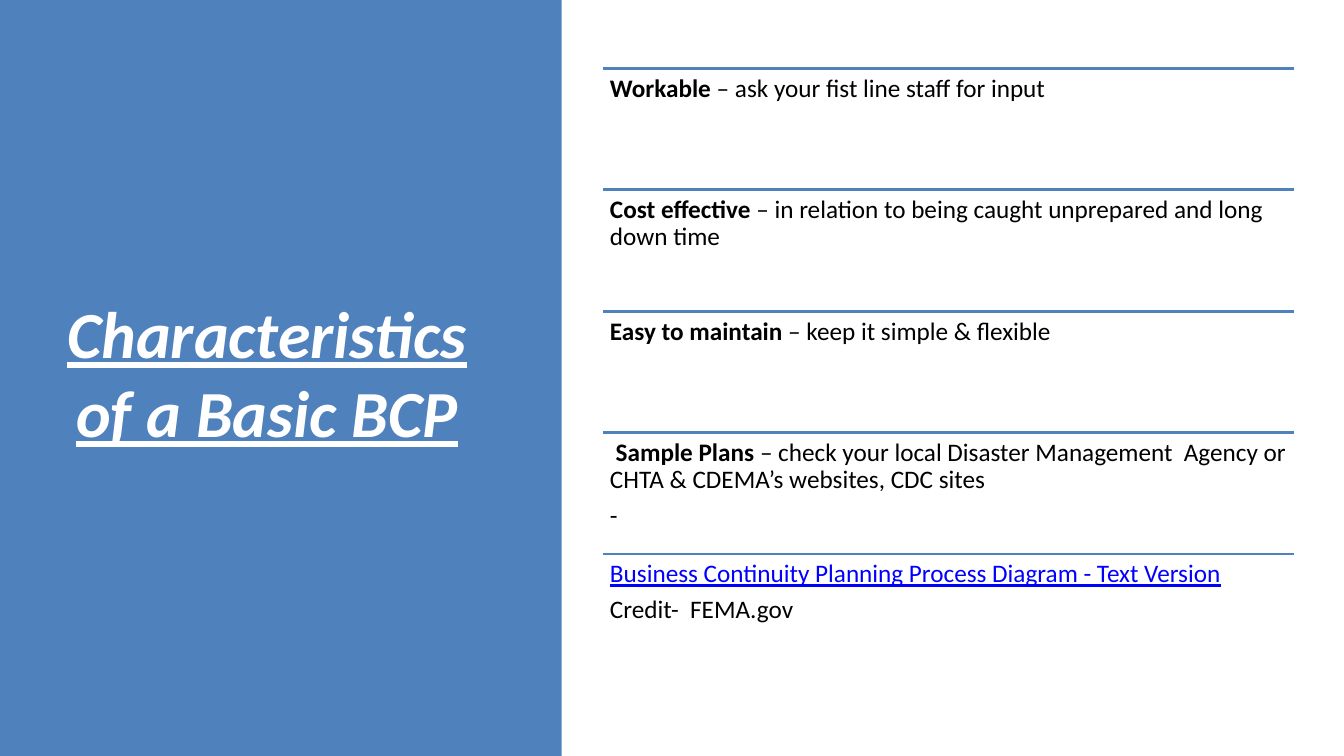
from dataclasses import dataclass

from lxml import etree
from pptx import Presentation
from pptx.dml.color import RGBColor
from pptx.enum.shapes import MSO_CONNECTOR, MSO_SHAPE
from pptx.enum.text import MSO_ANCHOR, PP_ALIGN
from pptx.oxml.ns import qn
from pptx.util import Inches, Pt

RECTANGLE = MSO_SHAPE.RECTANGLE
STRAIGHT = MSO_CONNECTOR.STRAIGHT
TOP, MIDDLE = MSO_ANCHOR.TOP, MSO_ANCHOR.MIDDLE
LEFT, CENTER = PP_ALIGN.LEFT, PP_ALIGN.CENTER


@dataclass(frozen=True)
class Theme:
    font: str = "Calibri"
    accent: str = "4F81BD"
    title_color: str = "FFFFFF"
    body_color: str = "000000"
    link_color: str = "0000FF"
    title_size: float = 47
    body_size: float = 18
    rule_width: float = 2


THEME = Theme()
BOLD = {"bold": True}
LINK = {"color": THEME.link_color, "underline": True}

TITLE = "Characteristics of a Basic BCP"

# Each item is a list of paragraphs; each paragraph is a list of (text, format)
ITEMS = [
    [[("Workable", BOLD), (" – ask your fist line staff for input", {})]],
    [[("Cost effective ", BOLD),
      ("– in relation to being caught unprepared and long down time", {})]],
    [[("Easy to maintain ", BOLD), ("– keep it simple & flexible", {})]],
    [[(" ", {}), ("Sample Plans ", BOLD),
      ("– check your local Disaster Management  Agency or CHTA & CDEMA’s "
       "websites, CDC sites", {})],
     [("-", {})]],
    [[("Business Continuity Planning Process Diagram - Text Version", LINK)],
     [("Credit-  FEMA.gov", {})]],
]


def add_span(para, text, size=THEME.body_size, color=THEME.body_color,
             bold=False, italic=False, underline=False):
    span = para.add_run()
    span.text = text
    font = span.font
    font.name = THEME.font
    font.size = Pt(size)
    font.color.rgb = RGBColor.from_string(color)
    font.bold, font.italic, font.underline = bold, italic, underline


def add_text(page, box, paragraphs, inset, anchor=TOP, align=LEFT,
             line_spacing=1.0, space_after=0):
    left, top, width, height = box
    frame = page.shapes.add_textbox(
        Inches(left), Inches(top), Inches(width), Inches(height)).text_frame
    frame.word_wrap = True
    frame.vertical_anchor = anchor
    frame.margin_left = frame.margin_right = Inches(inset)
    frame.margin_top = frame.margin_bottom = Inches(inset)
    for index, spans in enumerate(paragraphs):
        para = frame.add_paragraph() if index else frame.paragraphs[0]
        para.alignment = align
        para.line_spacing = line_spacing
        para.space_after = Pt(space_after)
        for text, style in spans:
            add_span(para, text, **style)


def add_rule(page, left, top, width):
    rule = page.shapes.add_connector(
        STRAIGHT, Inches(left), Inches(top), Inches(left + width), Inches(top))
    rule.line.color.rgb = RGBColor.from_string(THEME.accent)
    rule.line.width = Pt(THEME.rule_width)
    etree.SubElement(rule.element.spPr, qn("a:effectLst"))


def add_title_panel(page, box):
    left, top, width, height = box
    panel = page.shapes.add_shape(
        RECTANGLE, Inches(left), Inches(top), Inches(width), Inches(height))
    panel.shadow.inherit = False
    panel.fill.solid()
    panel.fill.fore_color.rgb = RGBColor.from_string(THEME.accent)
    panel.line.fill.background()
    style = {"size": THEME.title_size, "color": THEME.title_color,
             "bold": True, "italic": True, "underline": True}
    add_text(page, (left + 0.57, top + 0.68, 4.16, 6.02), [[(TITLE, style)]],
             inset=0.05, anchor=MIDDLE, align=CENTER)


def add_ruled_list(page, box, items):
    left, top, width, height = box
    row_height = height / len(items)
    for index, paragraphs in enumerate(items):
        row_top = top + index * row_height
        add_rule(page, left, row_top, width)
        add_text(page, (left, row_top, width, row_height), paragraphs,
                 inset=0.07, line_spacing=0.9, space_after=6.3)


def main():
    deck = Presentation()
    deck.slide_width, deck.slide_height = Inches(13.33), Inches(7.5)
    page = deck.slides.add_slide(deck.slide_layouts[6])
    add_title_panel(page, (0, 0, 5.57, 7.5))
    add_ruled_list(page, (5.98, 0.68, 6.85, 6.02), ITEMS)
    deck.save("out.pptx")


if __name__ == "__main__":
    main()
